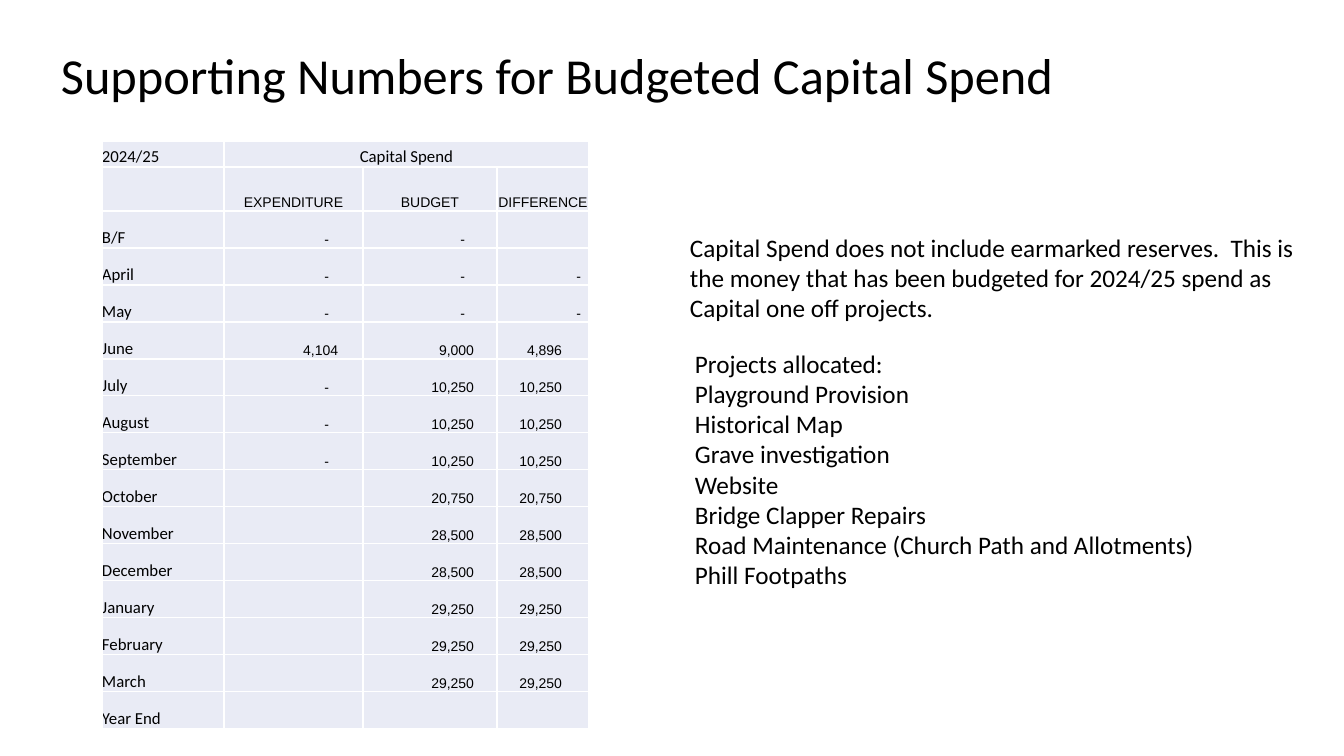
"""Build a slide with the 2024/25 capital spend table and its allocated projects."""
from lxml import etree
from pptx import Presentation
from pptx import util as u
from pptx.dml.color import RGBColor
from pptx.enum import text
from pptx.oxml import ns

PX = 914400 / 100.8
COLORS = {"ink": "000000", "cell": "E9EBF5", "border": "FFFFFF"}
ALIGN = text.PP_ALIGN


def px(length):
    return u.Emu(round(length * PX))


def add_span(para, words, size, font="Calibri"):
    span = para.add_run()
    span.text = words
    span.font.size = u.Pt(size)
    span.font.name = font
    span.font.color.rgb = RGBColor.from_string(COLORS["ink"])


deck = Presentation()
deck.slide_width, deck.slide_height = px(1344), px(756)
page = deck.slides.add_slide(deck.slide_layouts[6])

title = page.shapes.add_textbox(px(51), px(16), px(1203), px(125)).text_frame
title.word_wrap = True
title.vertical_anchor = text.MSO_ANCHOR.MIDDLE
title.paragraphs[0].line_spacing = 0.9
add_span(title.paragraphs[0], "Supporting Numbers for Budgeted Capital Spend", 36)

rows = [
    ("2024/25", "Capital Spend", "", ""),
    ("", "EXPENDITURE", "BUDGET", "DIFFERENCE"),
    ("B/F", "-", "-", ""),
    ("April", "-", "-", "-"),
    ("May", "-", "-", "-"),
    ("June", "4,104", "9,000", "4,896"),
    ("July", "-", "10,250", "10,250"),
    ("August", "-", "10,250", "10,250"),
    ("September", "-", "10,250", "10,250"),
    ("October", "", "20,750", "20,750"),
    ("November", "", "28,500", "28,500"),
    ("December", "", "28,500", "28,500"),
    ("January", "", "29,250", "29,250"),
    ("February", "", "29,250", "29,250"),
    ("March", "", "29,250", "29,250"),
    ("Year End", "", "", ""),
]
widths = [122, 139, 134, 92]
heights = [26, 44] + [37] * (len(rows) - 2)
number_margins = [0, 25, 23, 27]
dash_margins = [0, 34, 32, 8]

table = page.shapes.add_table(
    len(rows), len(widths), px(102), px(141), px(sum(widths)), px(sum(heights))
).table
table.first_row = table.horz_banding = False
for column, width in zip(table.columns, widths):
    column.width = px(width)
for row, height in zip(table.rows, heights):
    row.height = px(height)
table.cell(0, 1).merge(table.cell(0, 3))

for r, values in enumerate(rows):
    for c, value in enumerate(values):
        cell = table.cell(r, c)
        cell.margin_left = cell.margin_right = cell.margin_top = cell.margin_bottom = 0
        cell.vertical_anchor = text.MSO_ANCHOR.BOTTOM
        para = cell.text_frame.paragraphs[0]
        if c == 0:
            para.alignment = ALIGN.LEFT
        elif r < 2:
            para.alignment = ALIGN.CENTER
        else:
            para.alignment = ALIGN.RIGHT
            margins = dash_margins if value == "-" else number_margins
            cell.margin_right = px(margins[c])
        if c == 0 or value == "Capital Spend":
            add_span(para, value, 12)
        else:
            add_span(para, value, 10, "Arial")
        properties = cell._tc.get_or_add_tcPr()
        for side in ("a:lnL", "a:lnR", "a:lnT", "a:lnB"):
            line = etree.SubElement(properties, ns.qn(side), w=str(u.Pt(1)))
            fill = etree.SubElement(line, ns.qn("a:solidFill"))
            etree.SubElement(fill, ns.qn("a:srgbClr"), val=COLORS["border"])
        cell.fill.solid()
        cell.fill.fore_color.rgb = RGBColor.from_string(COLORS["cell"])

explanation = [
    "Capital Spend does not include earmarked reserves.  This is the money that "
    "has been budgeted for 2024/25 spend as Capital one off projects."
]
projects = [
    "Projects allocated:",
    "Playground Provision",
    "Historical Map",
    "Grave investigation",
    "Website",
    "Bridge Clapper Repairs",
    "Road Maintenance (Church Path and Allotments)",
    "Phill Footpaths",
]
for left, top, height, lines in ((680, 227, 102, explanation), (685, 343, 285, projects)):
    box = page.shapes.add_textbox(px(left), px(top), px(642), px(height)).text_frame
    box.word_wrap = True
    box.auto_size = text.MSO_AUTO_SIZE.SHAPE_TO_FIT_TEXT
    for index, words in enumerate(lines):
        para = box.add_paragraph() if index else box.paragraphs[0]
        add_span(para, words, 18)

deck.save("out.pptx")
